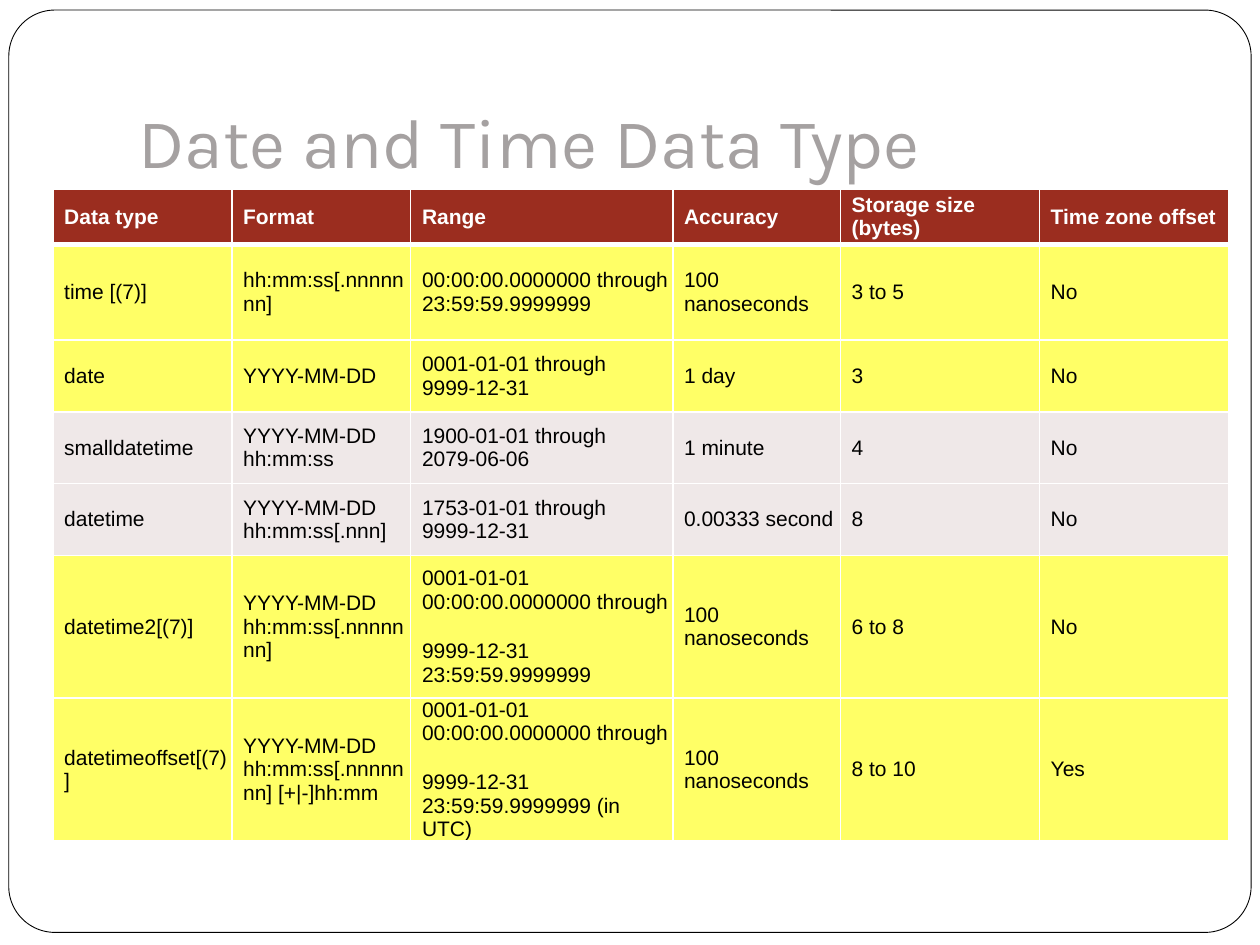
from lxml.etree import SubElement
from pptx import Presentation
from pptx.dml.color import RGBColor
from pptx.enum.shapes import MSO_SHAPE
from pptx.enum.text import MSO_ANCHOR, MSO_AUTO_SIZE, PP_ALIGN
from pptx.oxml.ns import qn
from pptx.util import Inches, Pt


def color(value):
    return RGBColor.from_string(value)


def add_border(cell, side, width):
    """Draw a white line on one side (L, R, T or B) of a cell."""
    properties = cell._tc.get_or_add_tcPr()
    line = SubElement(properties, qn(f"a:ln{side}"), w=str(Pt(width)))
    fill = SubElement(line, qn("a:solidFill"))
    SubElement(fill, qn("a:srgbClr"), val="FFFFFF")


RED, YELLOW, GRAY = "9B2D1F", "FFFF66", "EFE8E8"
COLUMN_WIDTHS = [1.42, 1.42, 2.08, 1.33, 1.58, 1.5]
ROWS = [
    (0.44, RED, ["Data type", "Format", "Range", "Accuracy",
                 "Storage size (bytes)", "Time zone offset"]),
    (0.76, YELLOW, ["time [(7)]", "hh:mm:ss[.nnnnnnn]",
                    "00:00:00.0000000 through 23:59:59.9999999",
                    "100 nanoseconds", "3 to 5", "No"]),
    (0.57, YELLOW, ["date", "YYYY-MM-DD", "0001-01-01 through \n9999-12-31",
                    "1 day", "3", "No"]),
    (0.57, GRAY, ["smalldatetime", "YYYY-MM-DD hh:mm:ss",
                  "1900-01-01 through \n2079-06-06", "1 minute", "4", "No"]),
    (0.57, GRAY, ["datetime", "YYYY-MM-DD hh:mm:ss[.nnn]",
                  "1753-01-01 through \n9999-12-31", "0.00333 second", "8", "No"]),
    (1.13, YELLOW, ["datetime2[(7)]", "YYYY-MM-DD hh:mm:ss[.nnnnnnn]",
                    "0001-01-01 00:00:00.0000000 through \n9999-12-31 23:59:59.9999999",
                    "100 nanoseconds", "6 to 8", "No"]),
    (1.13, YELLOW, ["datetimeoffset[(7)]", "YYYY-MM-DD hh:mm:ss[.nnnnnnn] [+|-]hh:mm",
                    "0001-01-01 00:00:00.0000000 through \n9999-12-31 23:59:59.9999999 (in UTC)",
                    "100 nanoseconds", "8 to 10", "Yes"]),
]

presentation = Presentation()
presentation.slide_width, presentation.slide_height = Inches(10), Inches(7.5)
slide = presentation.slides.add_slide(presentation.slide_layouts[5])

# Title
title = slide.shapes.title
title.left, title.top = Inches(1), Inches(0.3)
title.width, title.height = Inches(8.5), Inches(1.25)
text_frame = title.text_frame
text_frame.text = "Date and Time Data Type"
text_frame.word_wrap = True
text_frame.auto_size = MSO_AUTO_SIZE.NONE
text_frame.vertical_anchor = MSO_ANCHOR.BOTTOM
text_frame.margin_bottom = Inches(0.1)
paragraph = text_frame.paragraphs[0]
paragraph.alignment = PP_ALIGN.LEFT
font = paragraph.runs[0].font
font.name, font.size = "Karla", Pt(40)
font.color.rgb = color("A5A1A1")

# Rounded page frame, placed behind the title
frame = slide.shapes.add_shape(MSO_SHAPE.ROUNDED_RECTANGLE, Inches(0.07), Inches(0.08),
                               Inches(9.86), Inches(7.32))
frame.adjustments[0] = 0.05
frame.shadow.inherit = False
frame.fill.solid()
frame.fill.fore_color.rgb = color("FFFFFF")
frame.line.color.rgb = color("000000")
frame.line.width = Pt(0.5)
title._element.addprevious(frame._element)

# Data type table
table = slide.shapes.add_table(len(ROWS), len(COLUMN_WIDTHS), Inches(0.42), Inches(1.5),
                               Inches(9.33), Inches(5.17)).table
for column, width in zip(table.columns, COLUMN_WIDTHS):
    column.width = Inches(width)

for row_index, (height, fill, texts) in enumerate(ROWS):
    is_header = row_index == 0
    table.rows[row_index].height = Inches(height)
    for column_index, text in enumerate(texts):
        cell = table.cell(row_index, column_index)
        cell.vertical_anchor = MSO_ANCHOR.MIDDLE
        cell.margin_left = Inches(0.09)
        cell.margin_right = cell.margin_top = cell.margin_bottom = 0
        add_border(cell, "L", 1)
        add_border(cell, "R", 1)
        add_border(cell, "T", 3 if row_index == 1 else 1)
        add_border(cell, "B", 3 if is_header else 1)
        cell.fill.solid()
        cell.fill.fore_color.rgb = color(fill)
        paragraph = cell.text_frame.paragraphs[0]
        paragraph.text = text
        for run in paragraph.runs:
            run.font.name, run.font.size = "Arial", Pt(12)
            run.font.bold = is_header
            run.font.color.rgb = color("FFFFFF" if is_header else "000000")
        for line_break in paragraph._p.findall(qn("a:br")):
            SubElement(line_break, qn("a:rPr"), sz="1200")

presentation.save("out.pptx")
